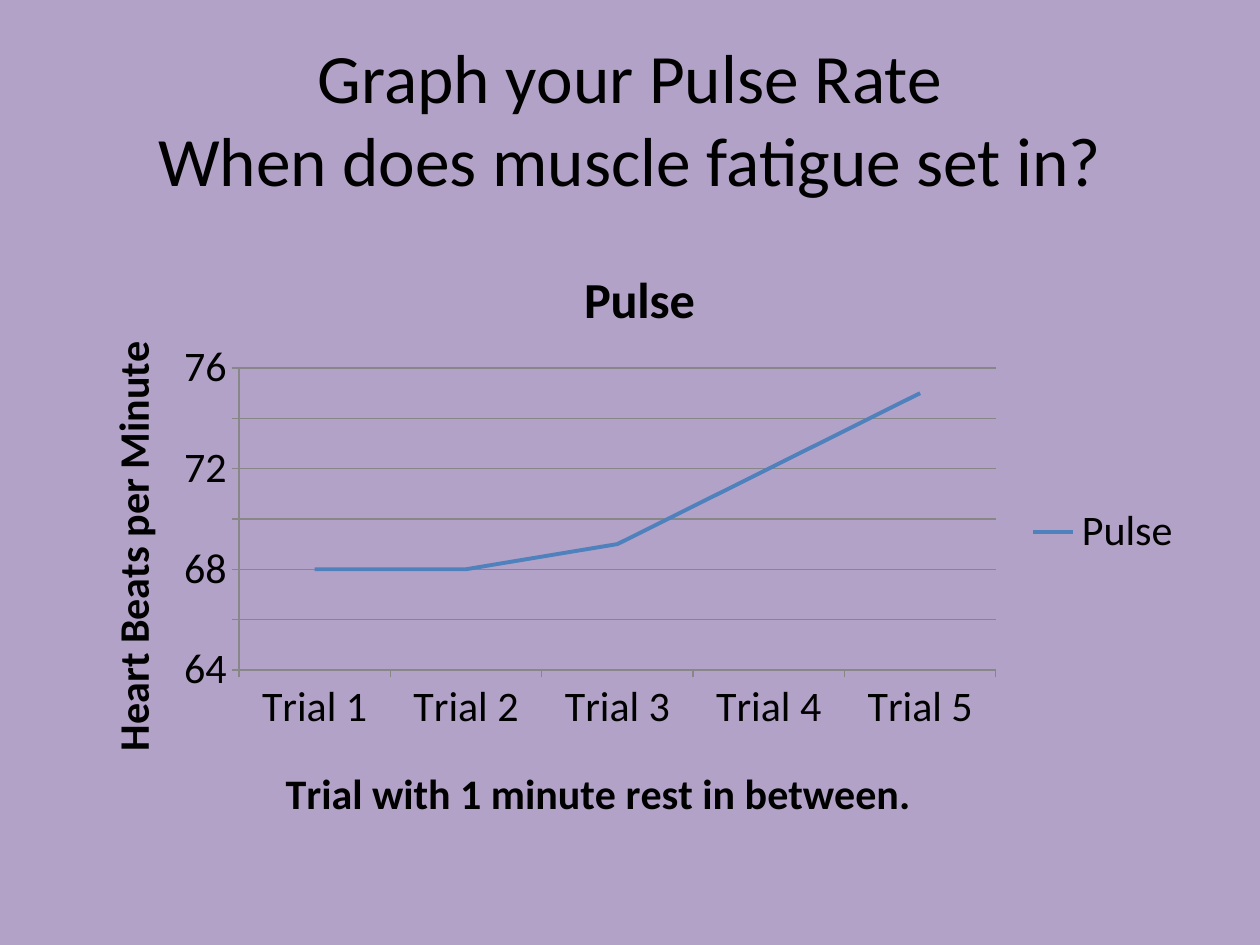
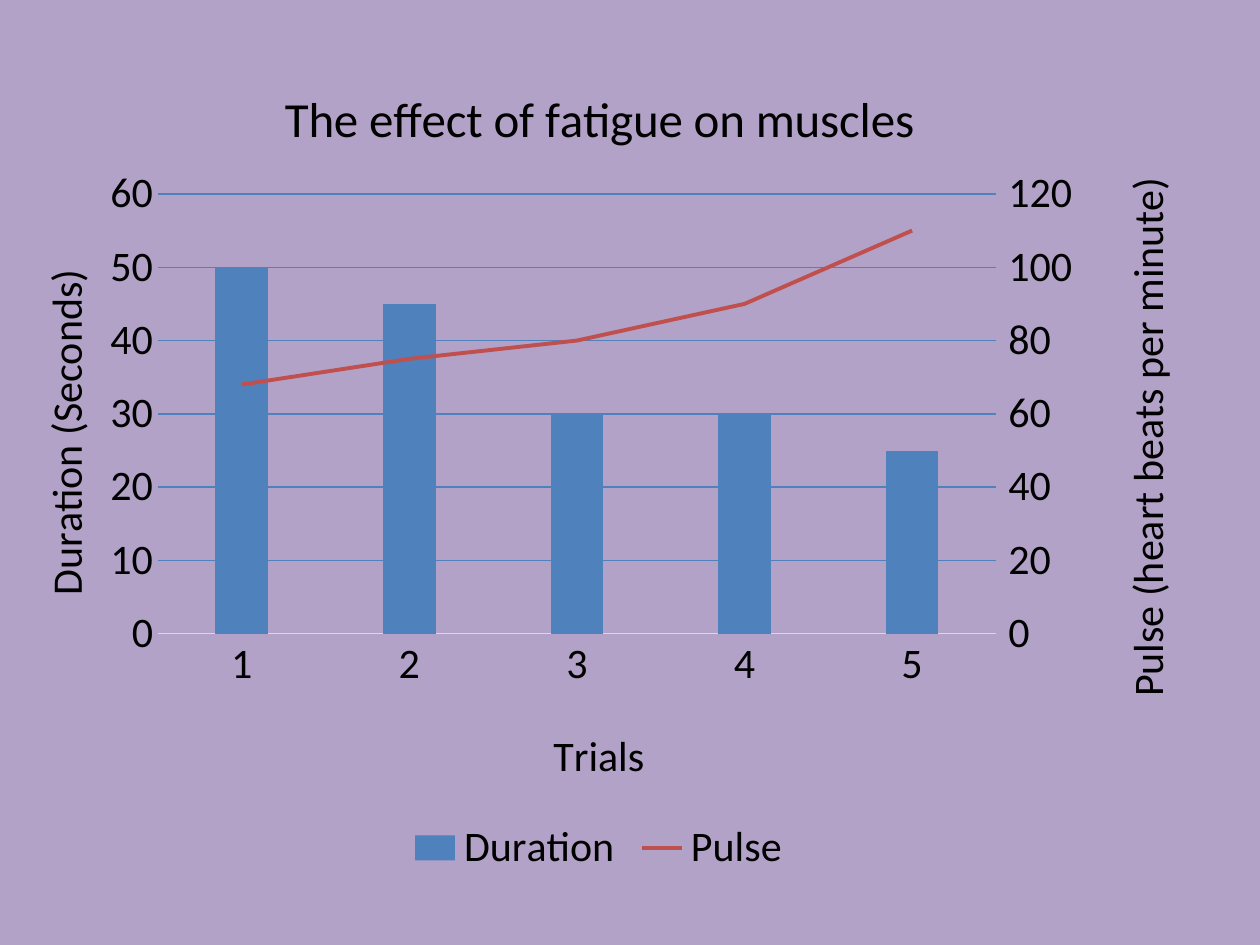
from dataclasses import dataclass

import pptx
import pptx.chart.axis
import pptx.chart.chart
import pptx.chart.data
import pptx.chart.plot
import pptx.dml.color
import pptx.enum.chart
import pptx.enum.text
import pptx.oxml
import pptx.oxml.ns
import pptx.slide
import pptx.text.text
import pptx.util

EMU_PER_PX = 914400 / 126
FONT = "Calibri"
LILAC, BLACK, GREY, PALE = "B3A2C7", "000000", "878787", "D9D9D9"
BLUE, RED = "4F81BD", "C0504D"
BODY_SIZE = 24
Tick = pptx.enum.chart.XL_TICK_MARK
Kind = pptx.enum.chart.XL_CHART_TYPE
Legend = pptx.enum.chart.XL_LEGEND_POSITION


@dataclass(frozen=True)
class Box:
    left: int
    top: int
    width: int = 0
    height: int = 0


@dataclass(frozen=True)
class Label:
    """A chart caption whose top left corner lies at (left, top) on the slide."""
    text: str
    left: int
    top: int
    size: float = BODY_SIZE
    bold: bool = False
    upright: bool = False


@dataclass(frozen=True)
class AxisStyle:
    label: Label
    tick: Tick
    line: str | None = None
    grid: str | None = None
    scale: tuple[int, int, int] | None = None  # minimum, maximum, step


@dataclass(frozen=True)
class Measure:
    name: str
    values: tuple[int, ...]
    colour: str


@dataclass(frozen=True)
class Graph:
    kind: Kind
    frame: Box
    plot: Box
    title: Label
    legend: Legend
    categories: tuple[str, ...]
    measures: tuple[Measure, ...]
    category_axis: AxisStyle
    value_axis: AxisStyle
    right_axis: AxisStyle | None = None


TRIAL_PULSE = Graph(
    Kind.LINE, Box(63, 220, 1134, 624), Box(239, 368, 757, 302),
    Label("Pulse", 575, 256, 28.8, True), Legend.RIGHT,
    tuple(f"Trial {n}" for n in range(1, 6)),
    (Measure("Pulse", (68, 68, 69, 72, 75), BLUE),),
    AxisStyle(Label("Trial with 1 minute rest in between.", 278, 758, bold=True),
              Tick.OUTSIDE, GREY),
    AxisStyle(Label("Heart Beats per Minute", 97, 334, bold=True, upright=True),
              Tick.OUTSIDE, GREY, GREY, (64, 76, 2)),
)
FATIGUE = Graph(
    Kind.COLUMN_CLUSTERED, Box(0, 38, 1197, 844), Box(158, 194, 838, 440),
    Label("The effect of fatigue on muscles", 276, 77, 28), Legend.BOTTOM,
    tuple(str(n) for n in range(1, 6)),
    (Measure("Duration", (50, 45, 30, 30, 25), BLUE),
     Measure("Pulse", (68, 75, 80, 90, 110), RED)),
    AxisStyle(Label("Trials", 546, 720), Tick.NONE, PALE),
    AxisStyle(Label("Duration (Seconds)", 30, 262, upright=True),
              Tick.NONE, None, BLUE, (0, 60, 10)),
    AxisStyle(Label("Pulse (heart beats per minute)", 1111, 170, upright=True),
              Tick.OUTSIDE, scale=(0, 120, 20)),
)


def px(length: int) -> int:
    return round(length * EMU_PER_PX)


def rgb(colour: str) -> pptx.dml.color.RGBColor:
    return pptx.dml.color.RGBColor.from_string(colour)


def style_font(font: pptx.text.text.Font, size: float, bold: bool = False) -> None:
    font.name, font.size, font.bold = FONT, pptx.util.Pt(size), bold
    font.color.rgb = rgb(BLACK)


def write(frame: pptx.text.text.TextFrame, text: str, *, size: float = BODY_SIZE,
          bold: bool = False) -> None:
    """Fill a frame with one centred paragraph; a newline breaks the line."""
    paragraph = frame.paragraphs[0]
    paragraph.text = text
    paragraph.alignment = pptx.enum.text.PP_ALIGN.CENTER
    for run in paragraph.runs:
        style_font(run.font, size, bold)


def chart_xml(tag: str, content: str):
    return pptx.oxml.parse_xml(
        f"<c:{tag} {pptx.oxml.ns.nsdecls('c', 'a')}>{content}</c:{tag}>")


def place(element, index: int, box: Box, frame: Box) -> None:
    """Fix a chart part at a slide position, as fractions of the chart frame."""
    for old in element.findall(pptx.oxml.ns.qn("c:layout")):
        element.remove(old)
    target = '<c:layoutTarget val="inner"/>' if box.width else ""
    fractions = {"x": (box.left - frame.left) / frame.width,
                 "y": (box.top - frame.top) / frame.height}
    if box.width:
        fractions |= {"w": box.width / frame.width, "h": box.height / frame.height}
    values = "".join(f'<c:{k} val="{v:.4f}"/>' for k, v in fractions.items())
    element.insert(index, chart_xml(
        "layout", f'<c:manualLayout>{target}<c:xMode val="edge"/>'
                  f'<c:yMode val="edge"/>{values}</c:manualLayout>'))


def add_label(title, label: Label, frame: Box) -> None:
    write(title.text_frame, label.text, size=label.size, bold=label.bold)
    body = title._element.find(".//" + pptx.oxml.ns.qn("a:bodyPr"))
    body.set("rot", "-5400000" if label.upright else "0")
    place(title._element, 1, Box(label.left, label.top), frame)


def style_line(line, colour: str | None, width: float = 0.75) -> None:
    if colour is None:
        line.fill.background()
        return
    line.color.rgb = rgb(colour)
    line.width = pptx.util.Pt(width)


def style_axis(axis, style: AxisStyle, frame: Box) -> None:
    add_label(axis.axis_title, style.label, frame)
    style_font(axis.tick_labels.font, BODY_SIZE)
    axis.major_tick_mark = style.tick
    axis.minor_tick_mark = Tick.NONE
    style_line(axis.format.line, style.line)
    axis.has_major_gridlines = style.grid is not None
    if style.grid:
        style_line(axis.major_gridlines.format.line, style.grid)
    if style.scale:
        axis.minimum_scale, axis.maximum_scale, axis.major_unit = style.scale


def move_last_to_right(chart: pptx.chart.chart.Chart) -> pptx.chart.axis.ValueAxis:
    """Turn the last column series into a line on a second value axis."""
    qn = pptx.oxml.ns.qn
    plot_area = chart._chartSpace.chart.plotArea
    columns = plot_area.find(qn("c:barChart"))
    series = columns.findall(qn("c:ser"))[-1]
    for bar_only in series.findall(qn("c:invertIfNegative")):
        series.remove(bar_only)
    lines = chart_xml("lineChart", '<c:grouping val="standard"/><c:varyColors val="0"/>'
                      '<c:marker val="1"/><c:axId val="5001"/><c:axId val="5002"/>')
    lines.insert(2, series)
    columns.addnext(lines)
    scaling = '<c:scaling><c:orientation val="minMax"/></c:scaling>'
    hidden = chart_xml("catAx", f'<c:axId val="5001"/>{scaling}<c:delete val="1"/>'
                       '<c:axPos val="b"/><c:crossAx val="5002"/>')
    right = chart_xml("valAx", f'<c:axId val="5002"/>{scaling}<c:delete val="0"/>'
                      '<c:axPos val="r"/><c:numFmt formatCode="General" sourceLinked="0"/>'
                      '<c:tickLblPos val="nextTo"/><c:crossAx val="5001"/>'
                      '<c:crosses val="max"/>')
    plot_area.findall(qn("c:valAx"))[-1].addnext(right)
    right.addnext(hidden)
    return pptx.chart.axis.ValueAxis(right)


def add_graph(slide: pptx.slide.Slide, graph: Graph) -> None:
    data = pptx.chart.data.CategoryChartData()
    data.categories = graph.categories
    for measure in graph.measures:
        data.add_series(measure.name, measure.values)
    frame = graph.frame
    chart = slide.shapes.add_chart(
        graph.kind, px(frame.left), px(frame.top), px(frame.width), px(frame.height),
        data).chart
    style_font(chart.font, BODY_SIZE)
    chart.has_title = True
    add_label(chart.chart_title, graph.title, frame)
    chart.has_legend = True
    chart.legend.position = graph.legend
    chart.legend.include_in_layout = False
    style_font(chart.legend.font, BODY_SIZE)

    style_axis(chart.category_axis, graph.category_axis, frame)
    style_axis(chart.value_axis, graph.value_axis, frame)
    if graph.right_axis:
        style_axis(move_last_to_right(chart), graph.right_axis, frame)
    place(chart._chartSpace.chart.plotArea, 0, graph.plot, frame)

    colours = {measure.name: measure.colour for measure in graph.measures}
    for plot in chart.plots:
        plot.vary_by_categories = False
        is_line = isinstance(plot, pptx.chart.plot.LinePlot)
        if not is_line:
            plot.gap_width = 219
        for series in plot.series:
            colour = colours[series.name]
            if is_line:
                style_line(series.format.line, colour, 2.25)
                series.marker.style = pptx.enum.chart.XL_MARKER_STYLE.NONE
                series.smooth = False
            else:
                series.format.fill.solid()
                series.format.fill.fore_color.rgb = rgb(colour)


def add_heading(slide: pptx.slide.Slide, text: str) -> None:
    heading = slide.shapes.add_textbox(px(63), px(38), px(1134), px(158)).text_frame
    heading.word_wrap = True
    heading.vertical_anchor = pptx.enum.text.MSO_ANCHOR.MIDDLE
    write(heading, text, size=39.6)


def add_slide(deck) -> pptx.slide.Slide:
    slide = deck.slides.add_slide(deck.slide_layouts[6])
    slide.background.fill.solid()
    slide.background.fill.fore_color.rgb = rgb(LILAC)
    return slide


def main() -> None:
    deck = pptx.Presentation()
    deck.slide_width, deck.slide_height = px(1260), px(945)
    pulse_slide = add_slide(deck)
    add_heading(pulse_slide, "Graph your Pulse Rate\nWhen does muscle fatigue set in?")
    add_graph(pulse_slide, TRIAL_PULSE)
    add_graph(add_slide(deck), FATIGUE)
    deck.save("out.pptx")


if __name__ == "__main__":
    main()
